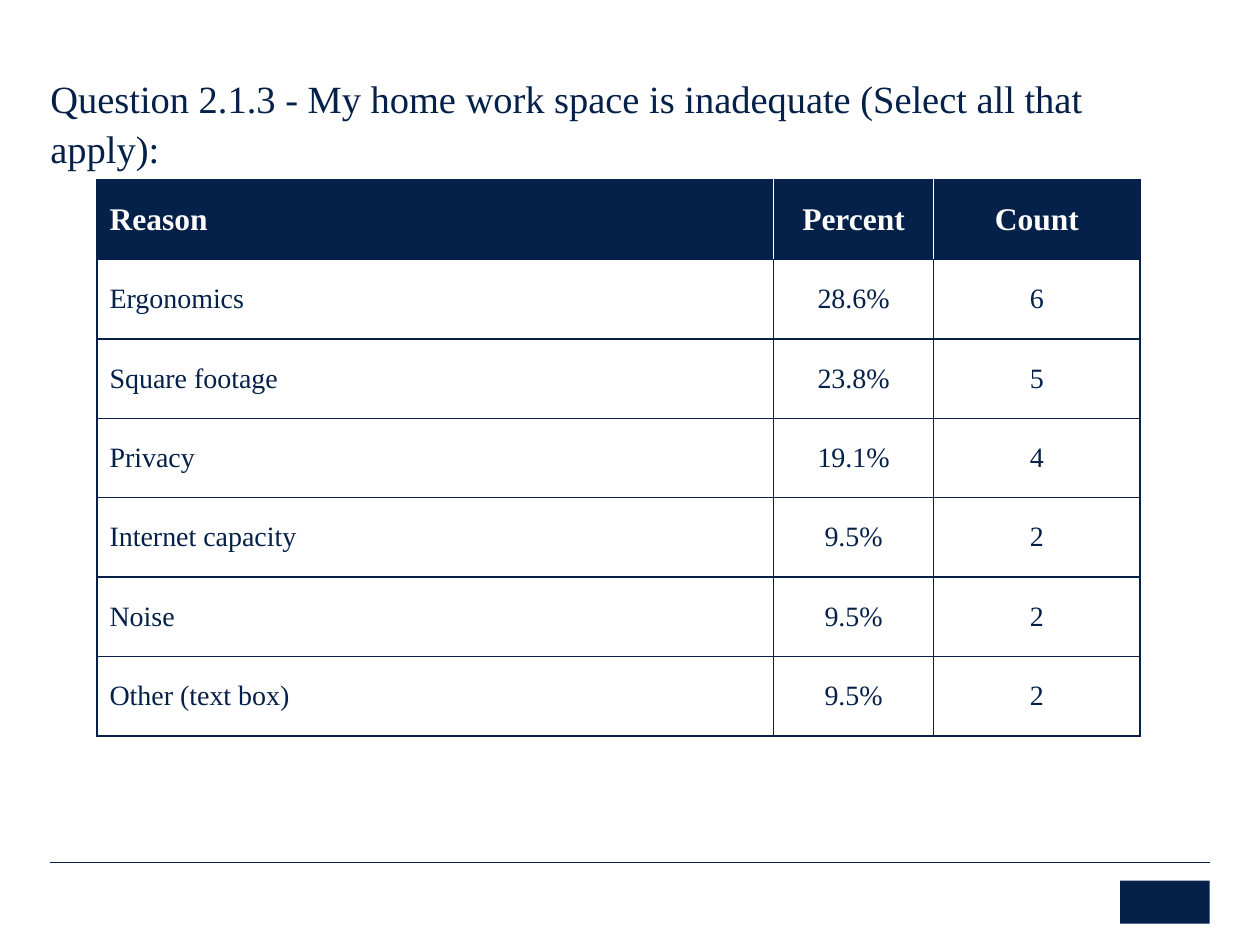
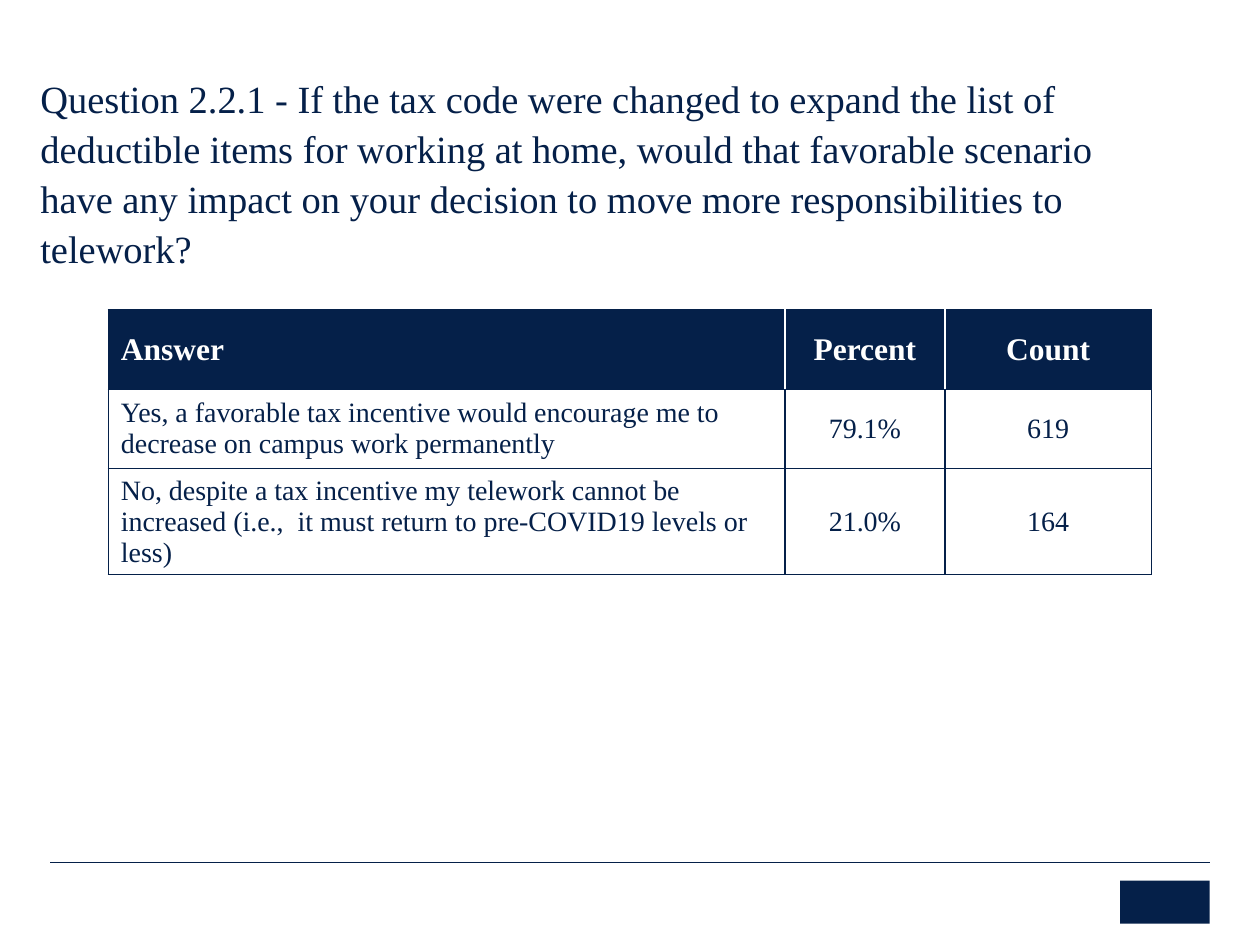
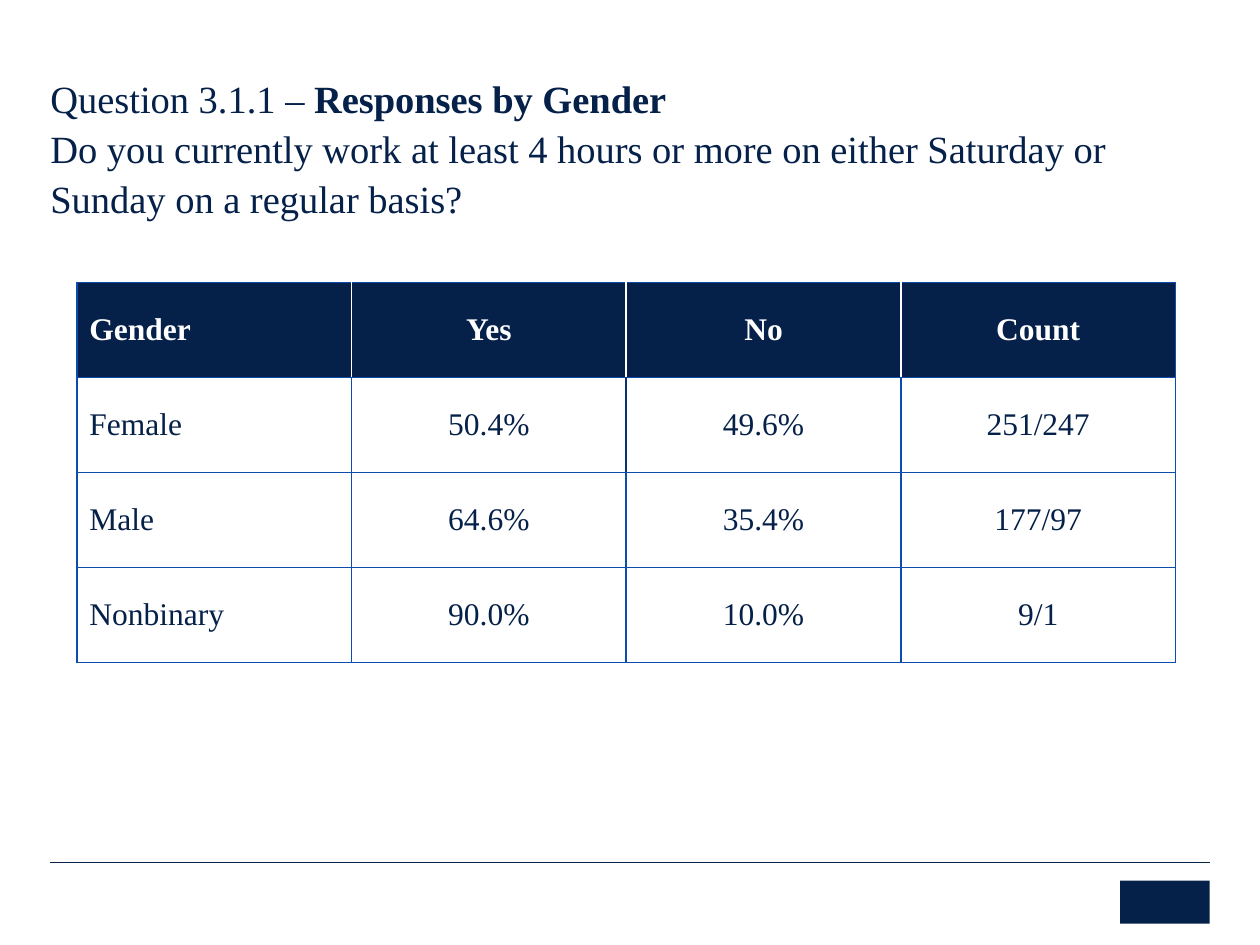
import pptx
import pptx.util
import pptx.dml.color
import pptx.enum.shapes
import pptx.enum.text
import pptx.oxml
import pptx.oxml.ns
from lxml import etree

Inches, Pt = pptx.util.Inches, pptx.util.Pt
ALIGN = pptx.enum.text.PP_ALIGN
ANCHOR = pptx.enum.text.MSO_ANCHOR

# Shared look
SLIDE_W, SLIDE_H = 10, 7.5
MARGIN = 0.04 * SLIDE_W
FOOTER_Y = 0.912 * SLIDE_H
TITLE_TOP, TITLE_W, TITLE_LINE = 0.52, 0.9 * SLIDE_W, 0.37
FONT = "Times New Roman"
COLORS = {"navy": "052049", "white": "FFFFFF", "blue": "0C4CAE", "deep": "083271"}
REASON_COLUMNS = (5.37, 1.27, 1.64)


def rgb(name):
    return pptx.dml.color.RGBColor.from_string(COLORS[name])


def add_run(paragraph, text, size, color="navy", bold=False):
    run = paragraph.add_run()
    run.text = text
    for key, value in {"name": FONT, "size": Pt(size), "bold": bold}.items():
        setattr(run.font, key, value)
    run.font.color.rgb = rgb(color)


def add_question(slide, paragraphs, lines, left=0.3):
    """Each paragraph is a list of (text, bold) parts."""
    question = slide.shapes.title
    box = {"left": left, "top": TITLE_TOP, "width": TITLE_W,
           "height": lines * TITLE_LINE + 0.1}
    for key, value in box.items():
        setattr(question, key, Inches(value))
    frame = question.text_frame
    frame_format = {"word_wrap": True, "vertical_anchor": ANCHOR.TOP,
                    "auto_size": pptx.enum.text.MSO_AUTO_SIZE.NONE}
    for key, value in frame_format.items():
        setattr(frame, key, value)
    for index, parts in enumerate(paragraphs):
        paragraph = frame.add_paragraph() if index else frame.paragraphs[0]
        paragraph.alignment = ALIGN.LEFT
        paragraph.line_spacing = 1.08
        for text, bold in parts:
            add_run(paragraph, text, 22, bold=bold)


def add_footer(slide):
    rule = slide.shapes.add_connector(
        pptx.enum.shapes.MSO_CONNECTOR.STRAIGHT, Inches(MARGIN), Inches(FOOTER_Y),
        Inches(SLIDE_W - MARGIN), Inches(FOOTER_Y))
    rule.line.color.rgb = rgb("navy")
    rule.line.width = Pt(0.25)
    etree.SubElement(rule._element.spPr, pptx.oxml.ns.qn("a:effectLst"))

    # Plain block in the place of the emblem
    emblem_w, emblem_h = 0.71, 0.34
    emblem = slide.shapes.add_shape(
        pptx.enum.shapes.MSO_SHAPE.RECTANGLE, Inches(SLIDE_W - MARGIN - emblem_w),
        Inches(FOOTER_Y + 0.15), Inches(emblem_w), Inches(emblem_h))
    emblem.shadow.inherit = False
    emblem.fill.solid()
    emblem.fill.fore_color.rgb = rgb("navy")
    emblem.line.fill.background()


def set_borders(cell, sides):
    properties = cell._tc.get_or_add_tcPr()
    for side in "LRTB":
        properties.append(pptx.oxml.parse_xml(
            f'<a:ln{side} {pptx.oxml.ns.nsdecls("a")} w="12700"><a:solidFill>'
            f'<a:srgbClr val="{COLORS[sides[side]]}"/></a:solidFill></a:ln{side}>'))


def add_answers(slide, rows, left, top, columns, row_height, size,
                grid="navy", special_borders=None):
    """First row is the header; special_borders maps (row, column) to sides."""
    special_borders = special_borders or {}
    answers = slide.shapes.add_table(
        len(rows), len(columns), Inches(left), Inches(top),
        Inches(sum(columns)), Inches(row_height * len(rows))).table
    answers.horz_banding = False
    for column, width in zip(answers.columns, columns):
        column.width = Inches(width)
    for r, values in enumerate(rows):
        answers.rows[r].height = Inches(row_height)
        header = r == 0
        for c, text in enumerate(values):
            cell = answers.cell(r, c)
            sides = dict.fromkeys("LRTB", grid)
            if header and c > 0:
                sides["L"] = "white"
            if header and c < len(columns) - 1:
                sides["R"] = "white"
            sides.update(special_borders.get((r, c), {}))
            set_borders(cell, sides)
            cell.fill.solid()
            cell.fill.fore_color.rgb = rgb("navy" if header else "white")
            cell.vertical_anchor = ANCHOR.MIDDLE
            paragraph = cell.text_frame.paragraphs[0]
            paragraph.alignment = ALIGN.CENTER if c else ALIGN.LEFT
            add_run(paragraph, text, 18 if header else size,
                    "white" if header else "navy", header)


def main():
    deck = pptx.Presentation()
    deck.slide_width, deck.slide_height = Inches(SLIDE_W), Inches(SLIDE_H)
    title_only = deck.slide_layouts[5]
    workspace, tax, gender = [deck.slides.add_slide(title_only) for _ in range(3)]
    for slide in deck.slides:
        add_footer(slide)

    # Home work space
    add_question(workspace, [[(
        "Question 2.1.3 - My home work space is inadequate (Select all that apply):",
        False)]], lines=2)
    add_answers(workspace, [
        ("Reason", "Percent", "Count"),
        ("Ergonomics", "28.6%", "6"),
        ("Square footage", "23.8%", "5"),
        ("Privacy", "19.1%", "4"),
        ("Internet capacity", "9.5%", "2"),
        ("Noise", "9.5%", "2"),
        ("Other (text box)", "9.5%", "2"),
    ], 0.77, 1.43, REASON_COLUMNS, 0.63, 16)

    # Tax incentive
    add_question(tax, [[(
        "Question 2.2.1 - If the tax code were changed to expand the list of "
        "deductible items for working at home, would that favorable scenario have "
        "any impact on your decision to move more responsibilities to telework?",
        False)]], lines=4, left=0.22)
    add_answers(tax, [
        ("Answer", "Percent", "Count"),
        ("Yes, a favorable tax incentive would encourage me to decrease on campus "
         "work permanently", "79.1%", "619"),
        ("No, despite a tax incentive my telework cannot be increased (i.e.,  it must "
         "return to pre-COVID19 levels or less)", "21.0%", "164"),
    ], 0.86, 2.46, REASON_COLUMNS, 0.63, 16)

    # Weekend work by gender
    add_question(gender, [
        [("Question 3.1.1 – ", False), ("Responses by Gender", True)],
        [("Do you currently work at least 4 hours or more on either Saturday or "
          "Sunday on a regular basis?", False)],
    ], lines=3)
    add_answers(gender, [
        ("Gender", "Yes", "No", "Count"),
        ("Female", "50.4%", "49.6%", "251/247"),
        ("Male", "64.6%", "35.4%", "177/97"),
        ("Nonbinary", "90.0%", "10.0%", "9/1"),
    ], 0.61, 2.24, (2.18,) * 4, 0.755, 18, grid="blue",
        special_borders={(1, 1): {"R": "deep"}, (1, 2): {"L": "deep"}})

    deck.save("out.pptx")


if __name__ == "__main__":
    main()
